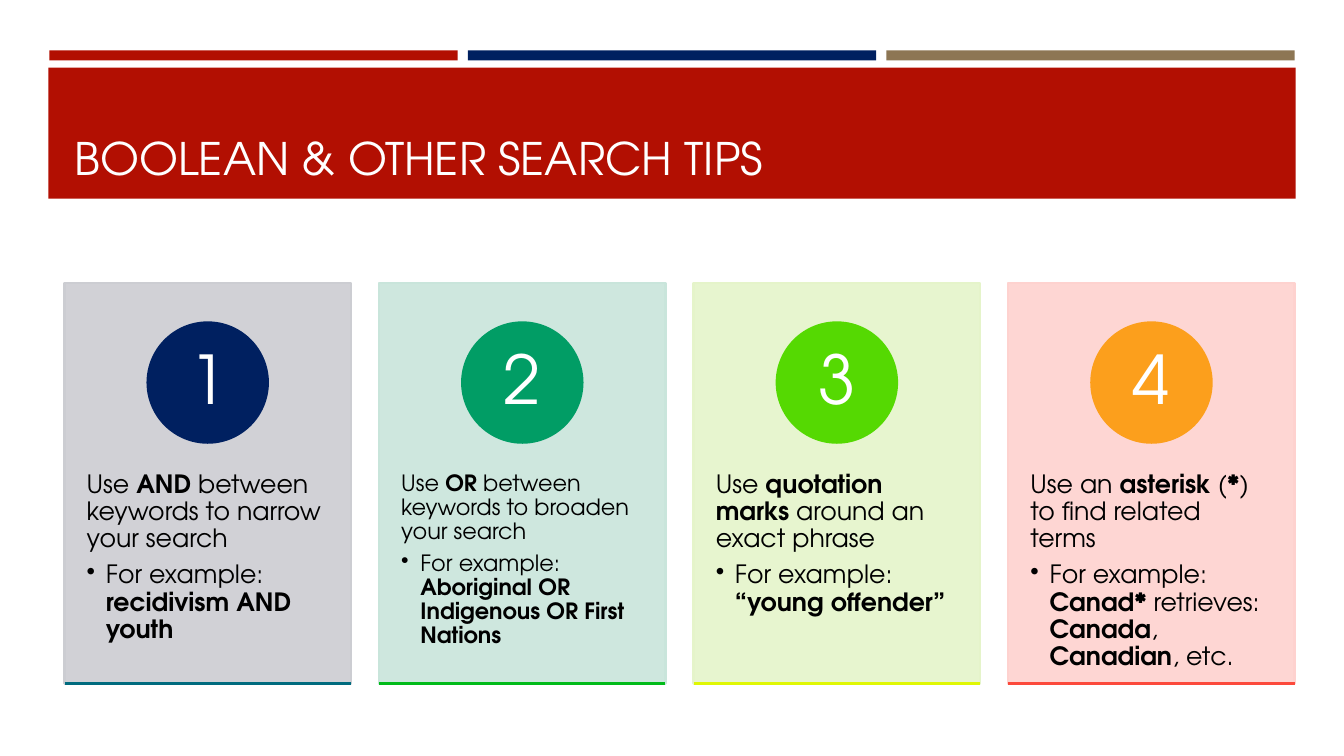
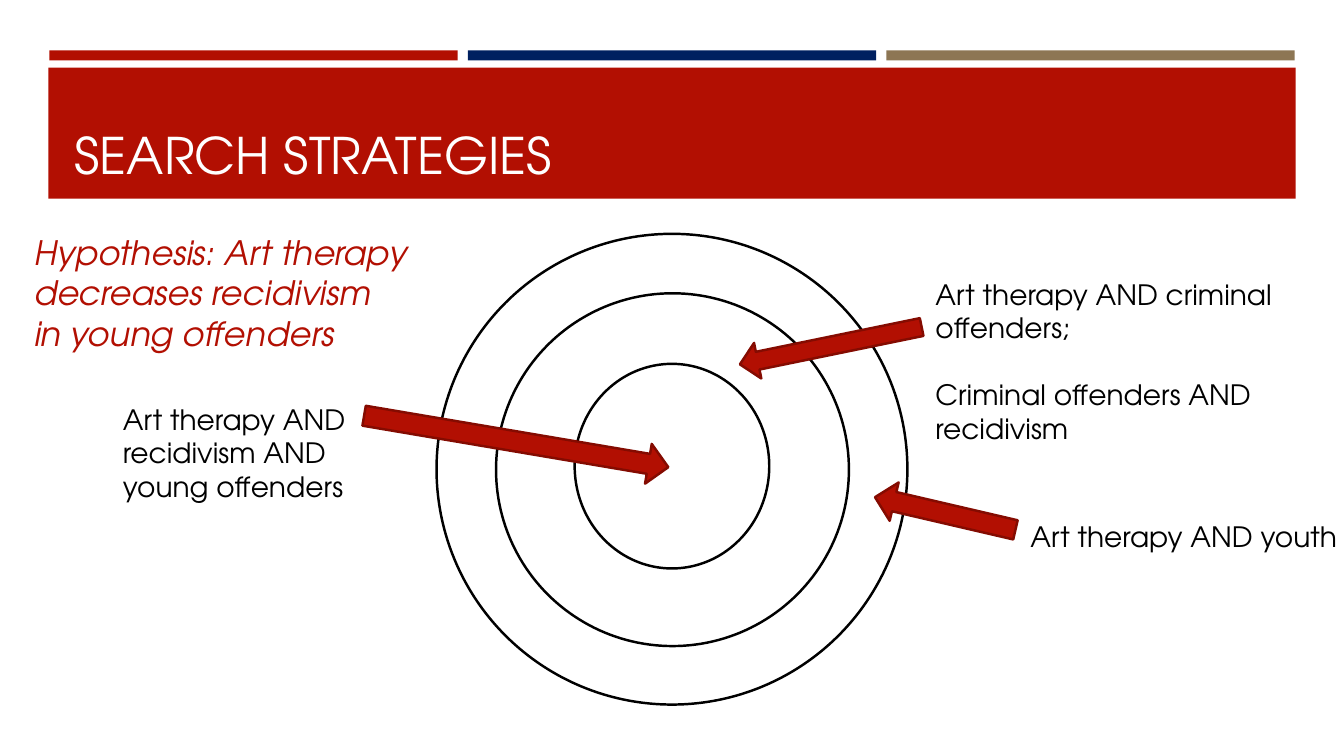
from lxml.etree import SubElement
from pptx import Presentation
from pptx.dml.color import RGBColor
from pptx.enum.shapes import MSO_CONNECTOR, MSO_SHAPE as SHAPE
from pptx.enum.text import MSO_ANCHOR as ANCHOR, PP_ALIGN as ALIGN
from pptx.oxml.ns import qn
from pptx.util import Emu, Pt

EMU_PER_PX = 9144  # 100 px to the inch
FONT = "TeX Gyre Adventor"
RED, NAVY, TAN = "B20F02", "002060", "8D7654"
DARK_RED, BLACK, WHITE = "840B01", "000000", "FFFFFF"
LINE_WIDTH = Pt(1.75)

# accent, card, base line, text size, then tip and example (every second run is bold)
TIPS = [
    (NAVY, "CCCDD2", "006B7E", 18,
     ["Use ", "AND", " between keywords to narrow your search"],
     ["For example: ", "recidivism AND youth"]),
    ("019D65", "C9E5DB", "01BB19", 16,
     ["Use ", "OR", " between keywords to broaden your search"],
     ["For example: ", "Aboriginal OR Indigenous OR First Nations"]),
    ("55D902", "E5F4CA", "DFF703", 18,
     ["Use ", "quotation marks ", "around an exact phrase"],
     ["For example: ", "“young offender”"]),
    ("FC9F1C", "FED2CF", "FC493B", 18,
     ["Use an ", "asterisk", " (", "*", ") to find related terms"],
     ["For example: ", "Canad* ", "retrieves: ", "Canada", ", ", "Canadian", ", etc."]),
]


def px(length):
    return Emu(round(length * EMU_PER_PX))


def rgb(color):
    return RGBColor.from_string(color)


def add_run(paragraph, text, size, color=BLACK, bold=False, italic=False):
    run = paragraph.add_run()
    run.text = text
    font = run.font
    font.name, font.size, font.bold, font.italic = FONT, Pt(size), bold, italic
    font.color.rgb = rgb(color)


def add_figure(slide, kind, box, fill, line=None, opacity=100):
    figure = slide.shapes.add_shape(kind, *map(px, box))
    figure.shadow.inherit = False
    figure.fill.solid()
    figure.fill.fore_color.rgb = rgb(fill)
    if line:
        figure.line.color.rgb = rgb(line)
        figure.line.width = LINE_WIDTH
    else:
        figure.line.fill.background()
    if opacity < 100:
        fill_color = figure.element.spPr.find(qn("a:solidFill"))[0]
        SubElement(fill_color, qn("a:alpha"), val=str(opacity * 1000))
    return figure


def set_insets(frame, left, top, right, bottom):
    frame.margin_left, frame.margin_top = px(left), px(top)
    frame.margin_right, frame.margin_bottom = px(right), px(bottom)


def build_layout(layout, slide):
    """Draw the bands on the slide, then move them behind the layout's title."""
    bands = [add_figure(slide, SHAPE.RECTANGLE, (49 + 415 * i, 50, 405, 10), color)
             for i, color in enumerate((RED, NAVY, TAN))]
    bands.append(add_figure(slide, SHAPE.RECTANGLE, (48, 67, 1237, 130), RED))
    for index, band in enumerate(bands, start=2):
        layout.shapes.element.insert(index, band.element)
    title = layout.placeholders[0]
    title.left, title.top, title.width, title.height = map(px, (64, 77, 1206, 111))
    title.text_frame.vertical_anchor = ANCHOR.BOTTOM


def set_title(slide, text, size):
    paragraph = slide.shapes.title.text_frame.paragraphs[0]
    paragraph.alignment = ALIGN.LEFT
    add_run(paragraph, text, size, WHITE)


def add_bullet(paragraph, indent):
    properties = paragraph._p.get_or_add_pPr()
    properties.set("marL", str(px(indent)))
    properties.set("indent", str(-px(indent)))
    SubElement(properties, qn("a:buChar"), char="•")


def add_tip_text(card, size, tip, example):
    frame = card.text_frame
    frame.word_wrap = True
    frame.vertical_anchor = ANCHOR.TOP
    set_insets(frame, 22, 187, 22, 5)
    statement, sample = frame.paragraphs[0], frame.add_paragraph()
    for paragraph, pieces, gap in ((statement, tip, 0.35), (sample, example, 0.15)):
        paragraph.alignment = ALIGN.LEFT
        paragraph.line_spacing = 0.9
        paragraph.space_after = Pt(round(size * gap, 1))
        for index, piece in enumerate(pieces):
            add_run(paragraph, piece, size, bold=index % 2 == 1)
    sample.level = 1
    add_bullet(sample, 19)


def add_base_line(slide, left, right, y, color):
    base = slide.shapes.add_connector(MSO_CONNECTOR.STRAIGHT,
                                      px(left), px(y), px(right), px(y))
    base.line.color.rgb = rgb(color)
    base.line.width = LINE_WIDTH
    SubElement(base.element.spPr, qn("a:effectLst"))


def add_tip_card(slide, box, number, tip):
    left, top, width, height = box
    accent, card_color, base_color, size, statement, example = tip
    card = add_figure(slide, SHAPE.RECTANGLE, box, card_color, card_color, 90)
    add_tip_text(card, size, statement, example)

    diameter = 119
    badge = add_figure(slide, SHAPE.OVAL,
                       (left + (width - diameter) / 2, top + 39, diameter, diameter),
                       accent, accent)
    frame = badge.text_frame
    frame.vertical_anchor = ANCHOR.MIDDLE
    set_insets(frame, 9, 1, 9, 1)
    label = frame.paragraphs[0]
    label.alignment = ALIGN.CENTER
    label.line_spacing = 0.9
    add_run(label, str(number), 48, WHITE)
    add_base_line(slide, left, left + width, top + height, base_color)


def build_tips(slide):
    set_title(slide, "BOOLEAN & OTHER SEARCH TIPS", 32)
    width, gap = 284, 28
    for index, tip in enumerate(TIPS):
        add_tip_card(slide, (64 + index * (width + gap), 281, width, 397), index + 1, tip)


def add_note(slide, box, blocks, size=20, color=BLACK, italic=False, wrap=True):
    """Write blocks of lines, with one line's space between blocks."""
    frame = slide.shapes.add_textbox(*map(px, box)).text_frame
    frame.word_wrap = wrap
    paragraph = None
    for block in blocks:
        for index, line in enumerate(block):
            first = paragraph is None
            paragraph = frame.paragraphs[0] if first else frame.add_paragraph()
            if index == 0 and not first:
                paragraph.space_before = Pt(size * 1.2)
            add_run(paragraph, line, size, color, italic=italic)


def add_target(slide, left, top):
    for box, opacity in (((0, 0, 467, 467), 30),
                         ((59, 59, 350, 350), 100),
                         ((137, 129, 193, 203), 100)):
        x, y, width, height = box
        add_figure(slide, SHAPE.OVAL, (left + x, top + y, width, height),
                   WHITE, BLACK, opacity)


def build_strategies(slide):
    set_title(slide, "SEARCH STRATEGIES", 36)
    add_target(slide, 433, 232)
    add_note(slide, (112, 394, 243, 111),
             [["Art therapy AND recidivism AND young offenders"]])
    add_note(slide, (918, 270, 364, 209),
             [["Art therapy AND criminal", "offenders;"],
              ["Criminal offenders AND", "recidivism"]], wrap=False)
    add_note(slide, (1012, 510, 328, 44), [["Art therapy AND youth"]], wrap=False)
    for kind, box, angle in ((SHAPE.RIGHT_ARROW, (359, 418, 306, 40), 9.6),
                             (SHAPE.LEFT_ARROW, (732, 325, 184, 36), -11.6),
                             (SHAPE.LEFT_ARROW, (866, 490, 143, 39), 13.1)):
        add_figure(slide, kind, box, RED, DARK_RED).rotation = angle
    add_note(slide, (24, 225, 571, 131),
             [["Hypothesis: Art therapy", "decreases recidivism", "in young offenders"]],
             24, RED, italic=True)


def main():
    deck = Presentation()
    deck.slide_width, deck.slide_height = px(1333), px(750)
    layout = deck.slide_layouts[5]
    tips, strategies = (deck.slides.add_slide(layout) for _ in range(2))
    build_layout(layout, tips)
    build_tips(tips)
    build_strategies(strategies)
    deck.save("out.pptx")


if __name__ == "__main__":
    main()
